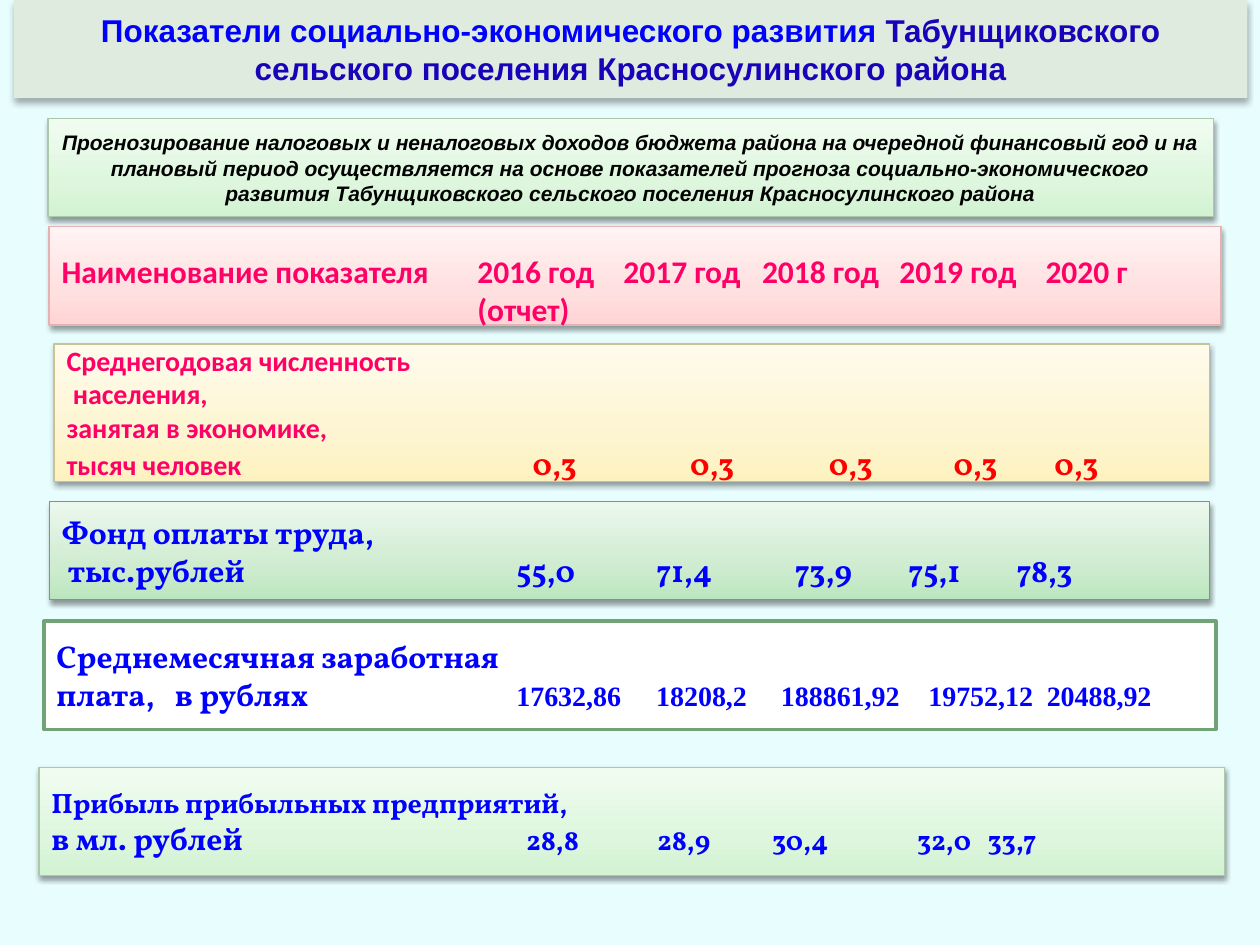
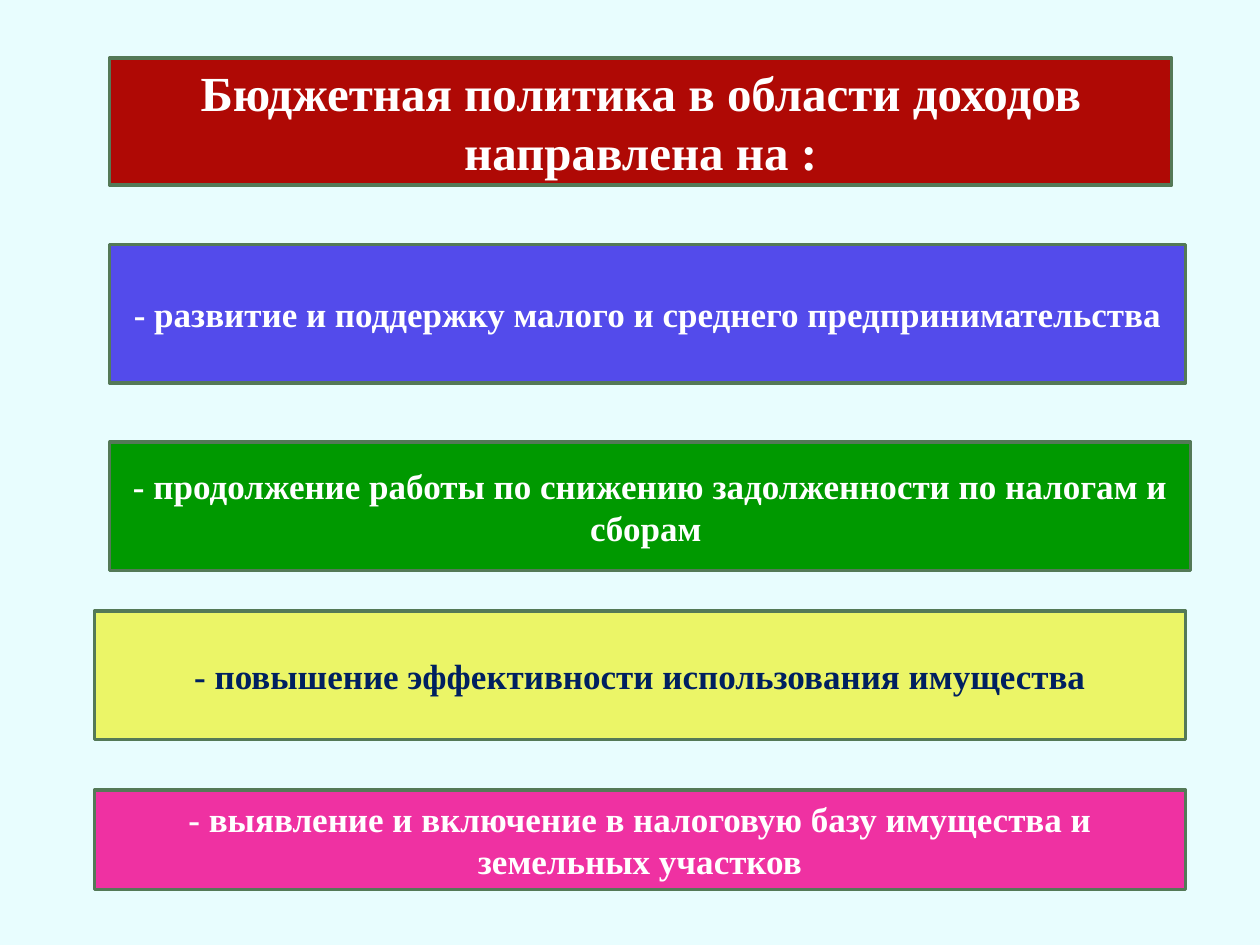
from lxml import etree
from pptx import Presentation
from pptx.dml.color import RGBColor
from pptx.enum import shapes, text
from pptx.oxml import ns
from pptx.util import Inches, Pt

BACKGROUND = RGBColor(0xE8, 0xFD, 0xFE)
WHITE = RGBColor(0xFF, 0xFF, 0xFF)
BLACK = RGBColor(0, 0, 0)
BLUE = RGBColor(0, 0, 0xFF)
INDIGO = RGBColor(0x19, 0x03, 0xB9)
NAVY = RGBColor(0, 0x20, 0x60)
RED = RGBColor(0xFF, 0, 0)
CRIMSON = RGBColor(0xFF, 0, 0x66)
TITLE_FILL = RGBColor(0xDF, 0xEB, 0xDF)
MINT_LINE = RGBColor(0xAB, 0xC8, 0xAB)
ROSE_LINE = RGBColor(0xE4, 0xB2, 0xB2)
SAND_LINE = RGBColor(0xCB, 0xC2, 0x92)
GREEN_LINE = RGBColor(0x6E, 0xA1, 0x72)
FRAME_LINE = RGBColor(0x72, 0xA3, 0x76)
POLICY_LINE = RGBColor(0x54, 0x79, 0x57)
POLICY_RED = RGBColor(0xAF, 0x09, 0x05)
POLICY_VIOLET = RGBColor(0x53, 0x4B, 0xEB)
POLICY_GREEN = RGBColor(0, 0x99, 0)
POLICY_YELLOW = RGBColor(0xEB, 0xF5, 0x67)
POLICY_PINK = RGBColor(0xEF, 0x31, 0xA2)

# Gradient colours from bottom to top, placed at GRADIENT_STOPS percent
GRADIENT_STOPS = (0, 35, 100)
MINT = [RGBColor.from_string(c) for c in ("D1F3D1", "DEF6DE", "F1FCF1")]
ROSE = [RGBColor.from_string(c) for c in ("FFD4D4", "FFE0E0", "FFF3F3")]
SAND = [RGBColor.from_string(c) for c in ("FDF2BF", "FDF5D1", "FFFBEC")]
GREEN = [RGBColor.from_string(c) for c in ("BBE6BD", "CFECD1", "ECF8ED")]

# Shadows: opacity percent, blur and distance in points
TITLE_SHADOW = (32, 3.5, 2.2)
CARD_SHADOW = (38, 3.1, 1.6)
SIDE_MARGIN = 0.1


def style(name, size, color, italic=False):
    return {"name": name, "size": Pt(size), "color": color, "bold": True, "italic": italic}


def child(parent, tag, **attributes):
    element = etree.SubElement(parent, ns.qn(tag))
    for key, value in attributes.items():
        element.set(key, str(value))
    return element


def set_gradient(shape, colors):
    shape.fill.gradient()
    gradient = shape._element.spPr.find(ns.qn("a:gradFill"))
    for old in list(gradient):
        gradient.remove(old)
    stops = child(gradient, "a:gsLst")
    for position, color in zip(GRADIENT_STOPS, colors):
        stop = child(stops, "a:gs", pos=position * 1000)
        child(stop, "a:srgbClr", val=color)
    child(gradient, "a:lin", ang=270 * 60000, scaled=1)


def set_shadow(shape, opacity, blur, distance):
    effects = shape._element.spPr.find(ns.qn("a:effectLst"))
    shadow = child(effects, "a:outerShdw", blurRad=Pt(blur), dist=Pt(distance),
                   dir=90 * 60000, rotWithShape=0)
    color = child(shadow, "a:srgbClr", val=BLACK)
    child(color, "a:alpha", val=opacity * 1000)


def add_box(slide, box, fill, line=None, line_width=0.75, shadow=None):
    shape = slide.shapes.add_shape(shapes.MSO_SHAPE.RECTANGLE, *map(Inches, box))
    shape.shadow.inherit = False
    if isinstance(fill, list):
        set_gradient(shape, fill)
    else:
        shape.fill.solid()
        shape.fill.fore_color.rgb = fill
    if line is None:
        shape.line.fill.background()
    else:
        shape.line.color.rgb = line
        shape.line.width = Pt(line_width)
    if shadow:
        set_shadow(shape, *shadow)
    return shape


def write(shape, lines, align, tabs=()):
    """Fill a shape with lines, each a list of (words, style) runs."""
    frame = shape.text_frame
    frame.word_wrap = True
    frame.vertical_anchor = text.MSO_ANCHOR.MIDDLE
    for number, runs in enumerate(lines):
        paragraph = frame.add_paragraph() if number else frame.paragraphs[0]
        paragraph.alignment = align
        if any("\t" in words for words, _ in runs):
            tab_list = child(paragraph._p.get_or_add_pPr(), "a:tabLst")
            for position in tabs:
                child(tab_list, "a:tab", pos=Inches(position), algn="l")
        for words, formats in runs:
            run = paragraph.add_run()
            run.text = words
            for key, value in formats.items():
                if key == "color":
                    run.font.color.rgb = value
                else:
                    setattr(run.font, key, value)


def add_centered(slide, box, runs, fill, **look):
    shape = add_box(slide, box, fill, **look)
    write(shape, [runs], text.PP_ALIGN.CENTER)


def add_indicator(slide, box, lines, columns, fill, **look):
    """Add a row whose tabbed values start at the given columns of the slide."""
    shape = add_box(slide, box, fill, **look)
    tabs = [column - box[0] - SIDE_MARGIN for column in columns]
    write(shape, lines, text.PP_ALIGN.LEFT, tabs)
    return shape


def tabbed(*values):
    return "".join("\t" + value for value in values)


def new_slide(presentation):
    slide = presentation.slides.add_slide(presentation.slide_layouts[6])
    slide.background.fill.solid()
    slide.background.fill.fore_color.rgb = BACKGROUND
    return slide


def build_indicators(presentation):
    slide = new_slide(presentation)
    add_centered(slide, (0.11, 0, 9.79, 0.78), [
        ("Показатели социально-экономического развития ", style("Arial", 18, BLUE)),
        ("Табунщиковского сельского поселения Красносулинского района",
         style("Arial", 18, INDIGO)),
    ], TITLE_FILL, shadow=TITLE_SHADOW)
    add_centered(slide, (0.38, 0.94, 9.25, 0.78), [
        ("Прогнозирование налоговых и неналоговых доходов бюджета района на очередной "
         "финансовый год и на плановый период осуществляется на основе показателей "
         "прогноза социально-экономического развития Табунщиковского сельского "
         "поселения Красносулинского района", style("Arial", 12, BLACK, italic=True)),
    ], MINT, line=MINT_LINE, shadow=CARD_SHADOW)

    heading = style("Calibri", 18, CRIMSON)
    header = add_indicator(slide, (0.39, 1.8, 9.3, 0.78), [
        [("Наименование показателя", heading),
         (tabbed("2016 год", "2017 год", "2018 год", "2019 год", "2020 г"), heading)],
        [("\t(отчет)", heading)],
    ], (3.79, 4.95, 6.05, 7.14, 8.3), ROSE, line=ROSE_LINE, shadow=CARD_SHADOW)
    header.text_frame.margin_top = Inches(0.27)

    label = style("Calibri", 16, CRIMSON)
    add_indicator(slide, (0.43, 2.73, 9.17, 1.09), [
        [("Среднегодовая численность", label)],
        [(" населения,", label)],
        [("занятая в экономике,", label)],
        [("тысяч человек", label), (tabbed(*["0,3"] * 5), style("Vollkorn", 18, RED))],
    ], (4.23, 5.48, 6.58, 7.57, 8.37), SAND, line=SAND_LINE, shadow=CARD_SHADOW)

    large, small = (style("Vollkorn", size, BLUE) for size in (18, 16))
    add_indicator(slide, (0.39, 3.98, 9.21, 0.78), [
        [("Фонд оплаты труда,", large)],
        [(" тыс.рублей", large), (tabbed("55,0", "71,4", "73,9", "75,1", "78,3"), large)],
    ], (4.1, 5.21, 6.31, 7.21, 8.07), GREEN, line=GREEN_LINE, shadow=CARD_SHADOW)
    add_indicator(slide, (0.35, 4.93, 9.3, 0.86), [
        [("Среднемесячная заработная", large)],
        [("плата,\tв рублях", large),
         (tabbed("17632,86", "18208,2", "188861,92", "19752,12", "20488,92"),
          style("Times New Roman", 16, BLUE))],
    ], (1.39, 4.1, 5.21, 6.2, 7.37, 8.31), WHITE, line=FRAME_LINE, line_width=2)
    add_indicator(slide, (0.31, 6.09, 9.41, 0.86), [
        [("Прибыль прибыльных предприятий,", small)],
        [("в мл. рублей", large), (tabbed("28,8", "28,9", "30,4", "32,0", "33,7"), small)],
    ], (4.18, 5.22, 6.13, 7.28, 7.84), MINT, line=MINT_LINE, shadow=CARD_SHADOW)


def build_policy(presentation):
    slide = new_slide(presentation)
    bands = [
        ((0.87, 0.46, 8.43, 1.01), POLICY_RED, 28, WHITE,
         "Бюджетная политика в области доходов направлена на :"),
        ((0.87, 1.94, 8.54, 1.1), POLICY_VIOLET, 20, WHITE,
         "- развитие и поддержку малого и среднего предпринимательства"),
        ((0.87, 3.51, 8.58, 1.02), POLICY_GREEN, 20, WHITE,
         "- продолжение работы по снижению задолженности по налогам и сборам "),
        ((0.75, 4.85, 8.66, 1.02), POLICY_YELLOW, 20, NAVY,
         "- повышение эффективности использования имущества"),
        ((0.75, 6.27, 8.66, 0.79), POLICY_PINK, 20, WHITE,
         "- выявление и включение в налоговую базу имущества и земельных участков"),
    ]
    for box, fill, size, color, words in bands:
        add_centered(slide, box, [(words, style("Times New Roman", size, color))], fill,
                     line=POLICY_LINE, line_width=2)


def main():
    presentation = Presentation()
    presentation.slide_width, presentation.slide_height = Inches(10), Inches(7.5)
    build_indicators(presentation)
    build_policy(presentation)
    presentation.save("out.pptx")


if __name__ == "__main__":
    main()
